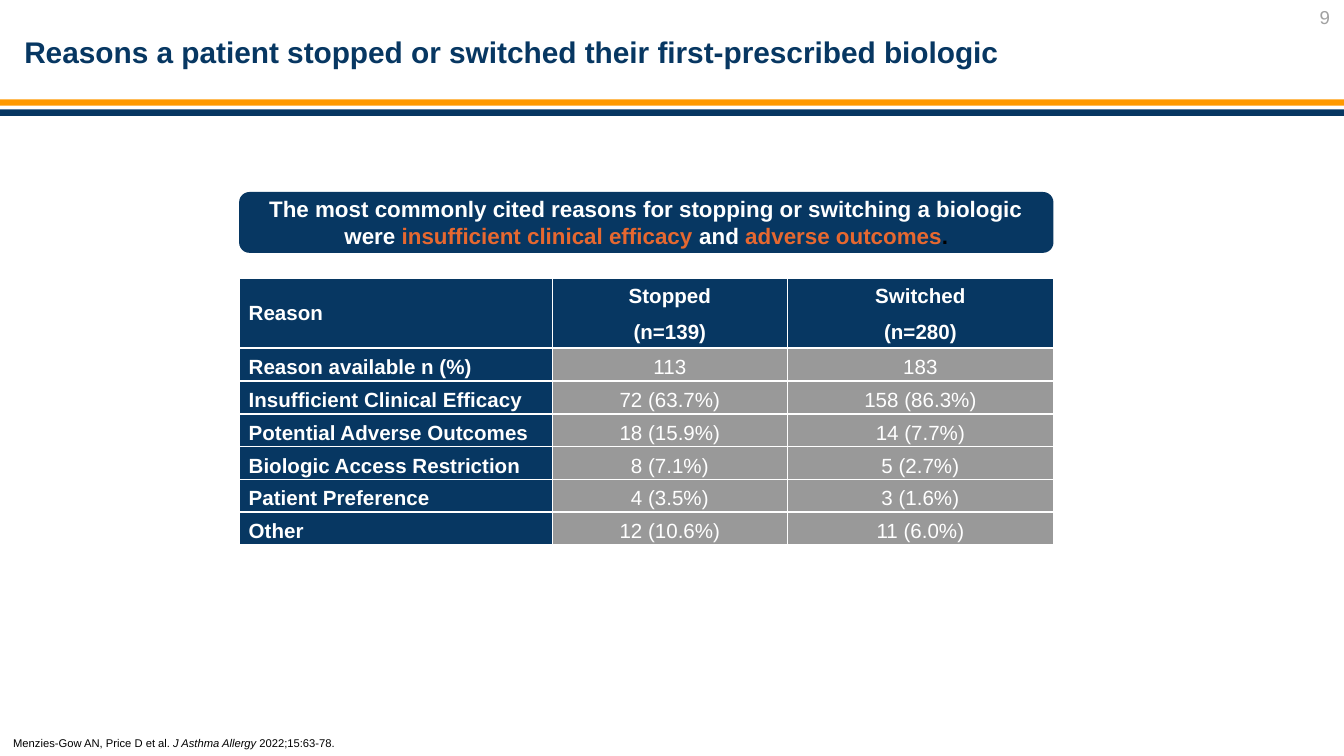
from lxml import etree
from pptx import Presentation, util as u
from pptx.dml.color import RGBColor
from pptx.enum import shapes, text
from pptx.oxml.ns import qn

COLORS = {
    "navy": "073762",
    "gold": "FF9900",
    "orange": "E66830",
    "gray": "999999",
    "number": "A1A1A1",
    "white": "FFFFFF",
    "black": "000000",
}
HEADER = ["Reason", "Stopped\n(n=139)", "Switched\n(n=280)"]
REASONS = [
    ["Reason available n (%)", "113", "183"],
    ["Insufficient Clinical Efficacy", "72 (63.7%)", "158 (86.3%)"],
    ["Potential Adverse Outcomes", "18 (15.9%)", "14 (7.7%)"],
    ["Biologic Access Restriction", "8 (7.1%)", "5 (2.7%)"],
    ["Patient Preference", "4 (3.5%)", "3 (1.6%)"],
    ["Other", "12 (10.6%)", "11 (6.0%)"],
]
COLUMN_WIDTHS = [5.92, 4.44, 5.03]
HEADER_HEIGHT, ROW_HEIGHT = 1.32, 0.62
CONTENT_LEFT, CONTENT_WIDTH = 4.52, sum(COLUMN_WIDTHS)


def color(name):
    return RGBColor.from_string(COLORS[name])


def paint(target, name):
    target.fill.solid()
    target.fill.fore_color.rgb = color(name)


def style(para, size, name, bold=False):
    para.font.name = "Arial"
    para.font.size = u.Pt(size)
    para.font.bold = bold
    para.font.color.rgb = color(name)


def set_margins(target, left=0, top=0, right=0, bottom=0):
    target.margin_left, target.margin_top = u.Cm(left), u.Cm(top)
    target.margin_right, target.margin_bottom = u.Cm(right), u.Cm(bottom)


def add_block(page, kind, left, top, width, height, name):
    block = page.shapes.add_shape(kind, u.Cm(left), u.Cm(top), u.Cm(width), u.Cm(height))
    block.shadow.inherit = False
    paint(block, name)
    block.line.fill.background()
    return block


def add_label(page, left, top, width, height, spans, size, name, bold=False):
    box = page.shapes.add_textbox(u.Cm(left), u.Cm(top), u.Cm(width), u.Cm(height))
    frame = box.text_frame
    frame.word_wrap = True
    set_margins(frame)
    para = frame.paragraphs[0]
    style(para, size, name, bold)
    for words, italic in spans:
        span = para.add_run()
        span.text = words
        if italic:
            span.font.italic = True


def add_message(page, spans):
    block = add_block(page, shapes.MSO_SHAPE.ROUNDED_RECTANGLE,
                      CONTENT_LEFT, 3.63, CONTENT_WIDTH, 1.15, "navy")
    block.adjustments[0] = 0.17
    frame = block.text_frame
    frame.word_wrap = True
    frame.vertical_anchor = text.MSO_ANCHOR.MIDDLE
    set_margins(frame, left=0.5, right=0.5)
    para = frame.paragraphs[0]
    para.alignment = text.PP_ALIGN.CENTER
    style(para, 12, "white", True)
    for words, name in spans:
        span = para.add_run()
        span.text = words
        span.font.color.rgb = color(name)


def add_borders(cell):
    properties = cell._tc.get_or_add_tcPr()
    for index, side in enumerate(["a:lnL", "a:lnR", "a:lnT", "a:lnB"]):
        line = etree.Element(qn(side), w=str(u.Pt(1)))
        fill = etree.SubElement(line, qn("a:solidFill"))
        etree.SubElement(fill, qn("a:srgbClr"), val=COLORS["white"])
        properties.insert(index, line)


def fill_cell(cell, words, is_header, is_label):
    cell.text = words
    paint(cell, "navy" if is_header or is_label else "gray")
    add_borders(cell)
    if is_header and is_label:
        cell.vertical_anchor = text.MSO_ANCHOR.MIDDLE
        set_margins(cell, left=0.18)
    else:
        set_margins(cell, left=0.18 if is_label else 0, top=0.13)
    for index, para in enumerate(cell.text_frame.paragraphs):
        style(para, 11, "white", is_header or is_label)
        if not is_label:
            para.alignment = text.PP_ALIGN.CENTER
        if index or not is_header:
            para.line_spacing = u.Pt(12.8)
        if index:
            para.space_before = u.Pt(6.6)


def add_reason_table(page):
    rows = [HEADER] + REASONS
    height = HEADER_HEIGHT + ROW_HEIGHT * len(REASONS)
    table = page.shapes.add_table(len(rows), len(HEADER), u.Cm(CONTENT_LEFT), u.Cm(5.26),
                                  u.Cm(CONTENT_WIDTH), u.Cm(height)).table
    for column, width in zip(table.columns, COLUMN_WIDTHS):
        column.width = u.Cm(width)
    for i, row in enumerate(rows):
        table.rows[i].height = u.Cm(ROW_HEIGHT if i else HEADER_HEIGHT)
        for j, words in enumerate(row):
            fill_cell(table.cell(i, j), words, i == 0, j == 0)


def main():
    deck = Presentation()
    deck.slide_width, deck.slide_height = u.Cm(25.4), u.Cm(14.29)
    page = deck.slides.add_slide(deck.slide_layouts[6])
    for top, name in [(1.88, "gold"), (2.07, "navy")]:
        add_block(page, shapes.MSO_SHAPE.RECTANGLE, 0, top, 25.4, 0.12, name)
    add_label(page, 0.46, 0.64, 20, 0.7,
              [("Reasons a patient stopped or switched their first-prescribed biologic", False)],
              16, "navy", True)
    add_label(page, 24.94, 0.11, 0.3, 0.45, [("9", False)], 10, "number")
    add_message(page, [
        ("The most commonly cited reasons for stopping or switching a biologic were ", "white"),
        ("insufficient clinical efficacy ", "orange"),
        ("and ", "white"),
        ("adverse outcomes", "orange"),
        (".", "black"),
    ])
    add_reason_table(page)
    add_label(page, 0.25, 13.91, 6.5, 0.3,
              [("Menzies-Gow AN, Price D et al. ", False),
               ("J Asthma Allergy ", True),
               ("2022;15:63-78.", False)], 6, "black")
    deck.save("out.pptx")


if __name__ == "__main__":
    main()
